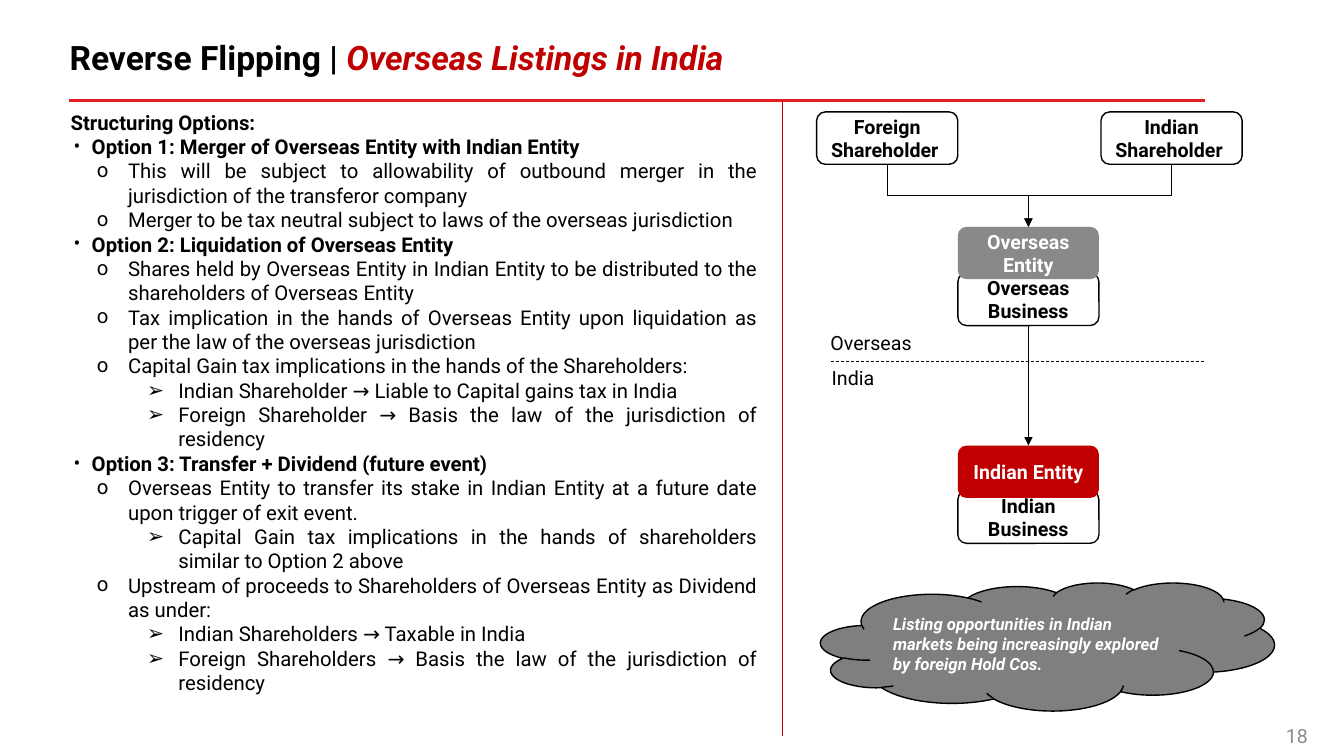
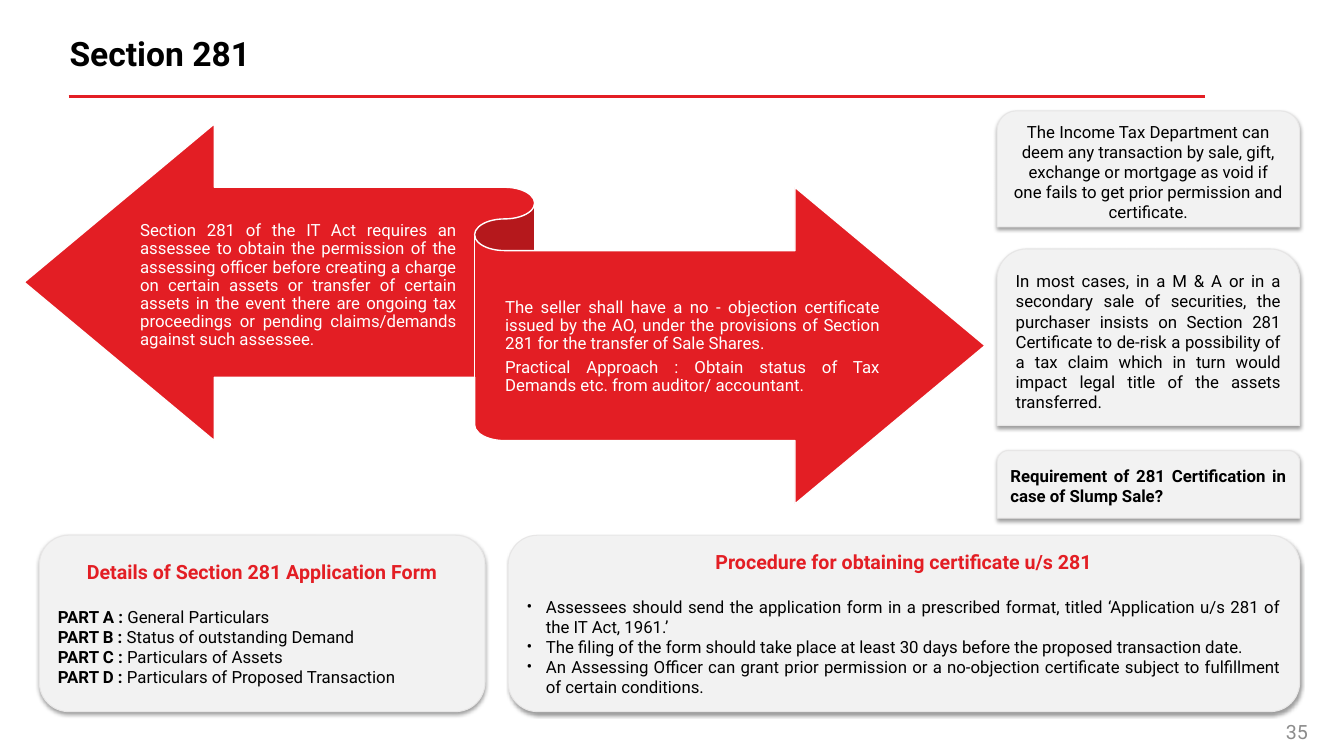
import pptx
import pptx.util
import pptx.dml.color
import pptx.enum.dml
import pptx.enum.shapes
import pptx.enum.text
import pptx.oxml.ns
from lxml import etree

Inches, Pt = pptx.util.Inches, pptx.util.Pt
RGBColor = pptx.dml.color.RGBColor
SHAPE = pptx.enum.shapes.MSO_SHAPE
CONNECTOR = pptx.enum.shapes.MSO_CONNECTOR
ALIGN = pptx.enum.text.PP_ALIGN
MIDDLE = pptx.enum.text.MSO_ANCHOR.MIDDLE
qn = pptx.oxml.ns.qn

# Shared look
FONT = "Roboto"
BLACK = RGBColor(0x00, 0x00, 0x00)
WHITE = RGBColor(0xFF, 0xFF, 0xFF)
RED = RGBColor(0xE3, 0x1E, 0x24)
DARK_RED = RGBColor(0xC0, 0x00, 0x00)
GREY = RGBColor(0x89, 0x89, 0x89)
CLOUD_GREY = RGBColor(0x7F, 0x7F, 0x7F)
NUMBER_GREY = RGBColor(0x8C, 0x8C, 0x8C)
CARD_FILL = RGBColor(0xF2, 0xF2, 0xF2)
CARD_LINE = RGBColor(0xE7, 0xE6, 0xE6)

# Content: structuring options as (kind, text)
OPTIONS = [
    ("heading", "Structuring Options:"),
    ("option", "Option 1: Merger of Overseas Entity with Indian Entity"),
    ("point", "This will be subject to allowability of outbound merger in the jurisdiction of the transferor company"),
    ("point", "Merger to be tax neutral subject to laws of the overseas jurisdiction"),
    ("option", "Option 2: Liquidation of Overseas Entity"),
    ("point", "Shares held by Overseas Entity in Indian Entity to be distributed to the shareholders of Overseas Entity"),
    ("point", "Tax implication in the hands of Overseas Entity upon liquidation as per the law of the overseas jurisdiction"),
    ("point", "Capital Gain tax implications in the hands of the Shareholders:"),
    ("detail", "Indian Shareholder → Liable to Capital gains tax in India"),
    ("detail", "Foreign Shareholder → Basis the law of the jurisdiction of residency"),
    ("option", "Option 3: Transfer + Dividend (future event)"),
    ("point", "Overseas Entity to transfer its stake in Indian Entity at a future date upon trigger of exit event."),
    ("detail", "Capital Gain tax implications in the hands of shareholders similar to Option 2 above"),
    ("point", "Upstream of proceeds to Shareholders of Overseas Entity as Dividend as under:"),
    ("detail", "Indian Shareholders → Taxable in India"),
    ("detail", "Foreign Shareholders → Basis the law of the jurisdiction of residency"),
]
# kind: (level, left margin, first-line indent, bullet, bold)
LIST_STYLES = {
    "heading": (0, 0, 0.3, None, True),
    "option": (0, 0.51, -0.18, "•", True),
    "point": (0, 0.87, -0.31, "o", False),
    "detail": (1, 1.37, -0.31, "➢", False),
}

# Content: structure chart, back to front: text, left, top, fill, outlined
BOX_WIDTH, BOX_HEIGHT = 1.4, 0.52
FOREIGN_LEFT, ENTITY_LEFT, INDIAN_LEFT = 8.1, 9.5, 10.92
ENTITY_BOXES = [
    ("Indian Business", ENTITY_LEFT, 4.87, WHITE, True),
    ("Overseas Business", ENTITY_LEFT, 2.71, WHITE, True),
    ("Overseas Entity", ENTITY_LEFT, 2.25, GREY, False),
    ("Indian Entity", ENTITY_LEFT, 4.42, DARK_RED, False),
    ("Foreign Shareholder ", FOREIGN_LEFT, 1.11, WHITE, True),
    ("Indian Shareholder ", INDIAN_LEFT, 1.11, WHITE, True),
]
REGION_LABELS = [("India", 7.95, 3.62, 1.02), ("Overseas", 8.12, 3.27, 1.04)]
CLOUD_TEXT = "Listing opportunities in Indian markets being increasingly explored by foreign Hold Cos."

# Content: Section 281
RIBBON_TEXTS = [
    ((1.39, 1.9, 3.14, 1.87), [
        "Section 281 of the IT Act requires an assessee to obtain the permission of the assessing officer "
        "before creating a charge on certain assets or transfer of certain assets in the event there are "
        "ongoing tax proceedings or pending claims/demands against such assessee."]),
    ((5.01, 2.51, 3.72, 1.87), [
        "The seller shall have a no - objection certificate issued by the AO, under the provisions of "
        "Section 281 for the transfer of Sale Shares.",
        "Practical Approach : Obtain status of Tax Demands etc. from auditor/ accountant."]),
]
# top, height, alignment, bold, text
SIDE_CARDS = [
    (1.1, 1.15, ALIGN.CENTER, False,
     "The Income Tax Department can deem any transaction by sale, gift, exchange or mortgage as void "
     "if one fails to get prior permission and certificate."),
    (2.47, 1.75, ALIGN.JUSTIFY, False,
     "In most cases, in a M & A or in a secondary sale of securities, the purchaser insists on Section 281 "
     "Certificate to de-risk a possibility of a tax claim which in turn would impact legal title of the "
     "assets transferred."),
    (4.47, 0.67, ALIGN.JUSTIFY, True,
     "Requirement of 281 Certification in case of Slump Sale?"),
]
FORM_PARTS = [
    ("PART A :", " General Particulars"),
    ("PART B :", " Status of outstanding Demand"),
    ("PART C :", " Particulars of Assets"),
    ("PART D :", " Particulars of Proposed Transaction"),
]
PROCEDURE_STEPS = [
    "Assessees should send the application form in a prescribed format, titled "
    "‘Application u/s 281 of the IT Act, 1961.’",
    "The filing of the form should take place at least 30 days before the proposed transaction date.",
    "An Assessing Officer can grant prior permission or a no-objection certificate subject to fulfillment "
    "of certain conditions.",
]


# Text helpers
def add_run(paragraph, text, size, color=BLACK, bold=False, italic=False):
    run = paragraph.add_run()
    run.text = text
    font = run.font
    font.name, font.size, font.bold, font.italic = FONT, Pt(size), bold, italic
    font.color.rgb = color


def next_paragraph(frame, align=ALIGN.LEFT):
    """Give the first paragraph while it is empty, then new ones."""
    first = frame.paragraphs[0]
    paragraph = frame.add_paragraph() if first.runs else first
    paragraph.alignment = align
    paragraph.space_before = Pt(0)
    return paragraph


def set_indent(paragraph, margin, indent, bullet=None):
    properties = paragraph._p.get_or_add_pPr()
    properties.set("marL", str(Inches(margin)))
    properties.set("indent", str(Inches(indent)))
    if bullet:
        etree.SubElement(properties, qn("a:buFont")).set("typeface", FONT)
        etree.SubElement(properties, qn("a:buChar")).set("char", bullet)
    else:
        etree.SubElement(properties, qn("a:buNone"))


def place(shape, left, top, width, height):
    shape.left, shape.top = Inches(left), Inches(top)
    shape.width, shape.height = Inches(width), Inches(height)


# Shape helpers
def add_shape(shapes, kind, box, fill, line=None, line_width=1):
    shape = shapes.add_shape(kind, *map(Inches, box))
    shape.shadow.inherit = False
    shape.fill.solid()
    shape.fill.fore_color.rgb = fill
    if line is None:
        shape.line.fill.background()
    else:
        shape.line.color.rgb = line
        shape.line.width = Pt(line_width)
    shape.text_frame.word_wrap = True
    shape.text_frame.vertical_anchor = MIDDLE
    return shape


def add_text_box(shapes, box):
    frame = shapes.add_textbox(*map(Inches, box)).text_frame
    frame.word_wrap = True
    frame.vertical_anchor = MIDDLE
    return frame


def add_line(slide, start, end, color=BLACK, width=0.5, arrow=False, kind=CONNECTOR.STRAIGHT):
    line = slide.shapes.add_connector(kind, *map(Inches, start + end))
    line.line.color.rgb = color
    line.line.width = Pt(width)
    if arrow:
        etree.SubElement(line.line._get_or_add_ln(), qn("a:tailEnd")).set("type", "triangle")
    etree.SubElement(line._element.spPr, qn("a:effectLst"))
    return line


def add_elbow_down(slide, start, end):
    """Draw a down-across-down arrow: a sideways elbow turned by a quarter."""
    (x1, y1), (x2, y2) = start, end
    half_drop, half_span = (y2 - y1) / 2, abs(x2 - x1) / 2
    middle_x, middle_y = (x1 + x2) / 2, (y1 + y2) / 2
    rightward = x2 > x1
    side = half_drop if rightward else -half_drop
    elbow = add_line(slide, (middle_x + side, middle_y - half_span),
                     (middle_x - side, middle_y + half_span), arrow=True, kind=CONNECTOR.ELBOW)
    elbow._element.spPr.find(qn("a:xfrm")).set("rot", str((270 if rightward else 90) * 60000))


def add_card(slide, kind, box):
    card = add_shape(slide.shapes, kind, box, CARD_FILL, CARD_LINE, 0.75)
    effects = card._element.spPr.find(qn("a:effectLst"))
    shadow = etree.SubElement(effects, qn("a:outerShdw"), blurRad=str(Pt(3.1)), dist=str(Pt(1.6)),
                              dir=str(90 * 60000), algn="t", rotWithShape="0")
    color = etree.SubElement(shadow, qn("a:srgbClr"), val=str(BLACK))
    etree.SubElement(color, qn("a:alpha"), val="38000")
    return card.text_frame


def add_card_heading(frame, text):
    heading = next_paragraph(frame, ALIGN.CENTER)
    heading.space_after = Pt(16.5)
    add_run(heading, text, 14, RED, bold=True)


def start_slide(presentation, layout, title, number, rule_top, accent=None):
    """Add a slide with title, red rule and page number, all set from the rule."""
    slide = presentation.slides.add_slide(presentation.slide_layouts[layout])
    place(slide.shapes.title, 0.39, rule_top - 0.75, 11.33, 0.69)
    frame = slide.shapes.title.text_frame
    frame.vertical_anchor = MIDDLE
    paragraph = next_paragraph(frame)
    paragraph.line_spacing = 0.9
    set_indent(paragraph, 0.2, 0)
    add_run(paragraph, title, 24, bold=True)
    if accent:
        add_run(paragraph, accent, 24, DARK_RED, bold=True, italic=True)
    add_line(slide, (0.68, rule_top), (11.95, rule_top), RED, 2.25)
    page = add_text_box(slide.shapes, (10.07, rule_top + 6.1, 3, 0.4))
    add_run(next_paragraph(page, ALIGN.RIGHT), number, 14, NUMBER_GREY)
    return slide


def build_reverse_flipping(presentation):
    slide = start_slide(presentation, 1, "Reverse Flipping | ", "18", 1, "Overseas Listings in India")

    # Options list
    body = slide.placeholders[1]
    place(body, 0.3, 1.04, 7.31, 6.2)
    body.text_frame.auto_size = pptx.enum.text.MSO_AUTO_SIZE.NONE
    for kind, text in OPTIONS:
        level, margin, indent, bullet, bold = LIST_STYLES[kind]
        paragraph = next_paragraph(body.text_frame, ALIGN.JUSTIFY)
        paragraph.level = level
        set_indent(paragraph, margin, indent, bullet)
        add_run(paragraph, text, 14.5, bold=bold)
    add_line(slide, (7.76, 1), (7.76, 7.3), DARK_RED)

    # Structure chart
    rounded = SHAPE.ROUNDED_RECTANGLE
    for text, left, top, fill, outlined in ENTITY_BOXES:
        box = add_shape(slide.shapes, rounded, (left, top, BOX_WIDTH, BOX_HEIGHT), fill,
                        BLACK if outlined else None)
        add_run(next_paragraph(box.text_frame, ALIGN.CENTER), text, 14,
                BLACK if outlined else WHITE, bold=True)
    for text, left, top, width in REGION_LABELS:
        label = add_shape(slide.shapes, rounded, (left, top, width, 0.26), WHITE)
        add_run(next_paragraph(label.text_frame, ALIGN.CENTER), text, 14)
    center = ENTITY_LEFT + BOX_WIDTH / 2
    add_line(slide, (center, 3.23), (center, 4.42), arrow=True)
    border = add_line(slide, (8.24, 3.59), (11.95, 3.59))
    border.line.dash_style = pptx.enum.dml.MSO_LINE.DASH
    for left in (FOREIGN_LEFT, INDIAN_LEFT):
        add_elbow_down(slide, (left + BOX_WIDTH / 2, 1.63), (center, 2.25))

    # Remark
    cloud = add_shape(slide.shapes, SHAPE.CLOUD, (8.14, 5.78, 4.5, 1.27), CLOUD_GREY, BLACK)
    add_run(next_paragraph(cloud.text_frame), CLOUD_TEXT, 12, WHITE, bold=True, italic=True)


def build_section_281(presentation):
    slide = start_slide(presentation, 5, "Section 281", "35", 0.96)

    # Ribbon with its two texts
    ribbon = slide.shapes.add_group_shape().shapes
    add_shape(ribbon, SHAPE.LEFT_RIGHT_RIBBON, (0.24, 1.23, 9.53, 3.77), RED, WHITE)
    for box, texts in RIBBON_TEXTS:
        frame = add_text_box(ribbon, box)
        frame.margin_left = frame.margin_right = 0
        for text in texts:
            paragraph = next_paragraph(frame, ALIGN.JUSTIFY)
            paragraph.line_spacing = 0.9
            paragraph.space_after = Pt(4.2)
            add_run(paragraph, text, 12, WHITE)

    # Cards on the right
    for top, height, align, bold, text in SIDE_CARDS:
        frame = add_card(slide, SHAPE.ROUND_2_SAME_RECTANGLE, (9.89, top, 3, height))
        add_run(next_paragraph(frame, align), text, 12, bold=bold)

    # Cards along the bottom
    form = add_card(slide, SHAPE.FLOWCHART_ALTERNATE_PROCESS, (0.39, 5.31, 4.42, 1.75))
    add_card_heading(form, "Details of Section 281 Application Form")
    for part, subject in FORM_PARTS:
        paragraph = next_paragraph(form)
        add_run(paragraph, part, 12, bold=True)
        add_run(paragraph, subject, 12)
    procedure = add_card(slide, SHAPE.FLOWCHART_ALTERNATE_PROCESS, (5.04, 5.31, 7.85, 1.75))
    add_card_heading(procedure, "Procedure for obtaining certificate u/s 281")
    for step in PROCEDURE_STEPS:
        paragraph = next_paragraph(procedure, ALIGN.JUSTIFY)
        set_indent(paragraph, 0.19, -0.19, "•")
        add_run(paragraph, step, 12)


def main():
    presentation = pptx.Presentation()
    presentation.slide_width, presentation.slide_height = Inches(13.33), Inches(7.5)
    build_reverse_flipping(presentation)
    build_section_281(presentation)
    presentation.save("out.pptx")


if __name__ == "__main__":
    main()
